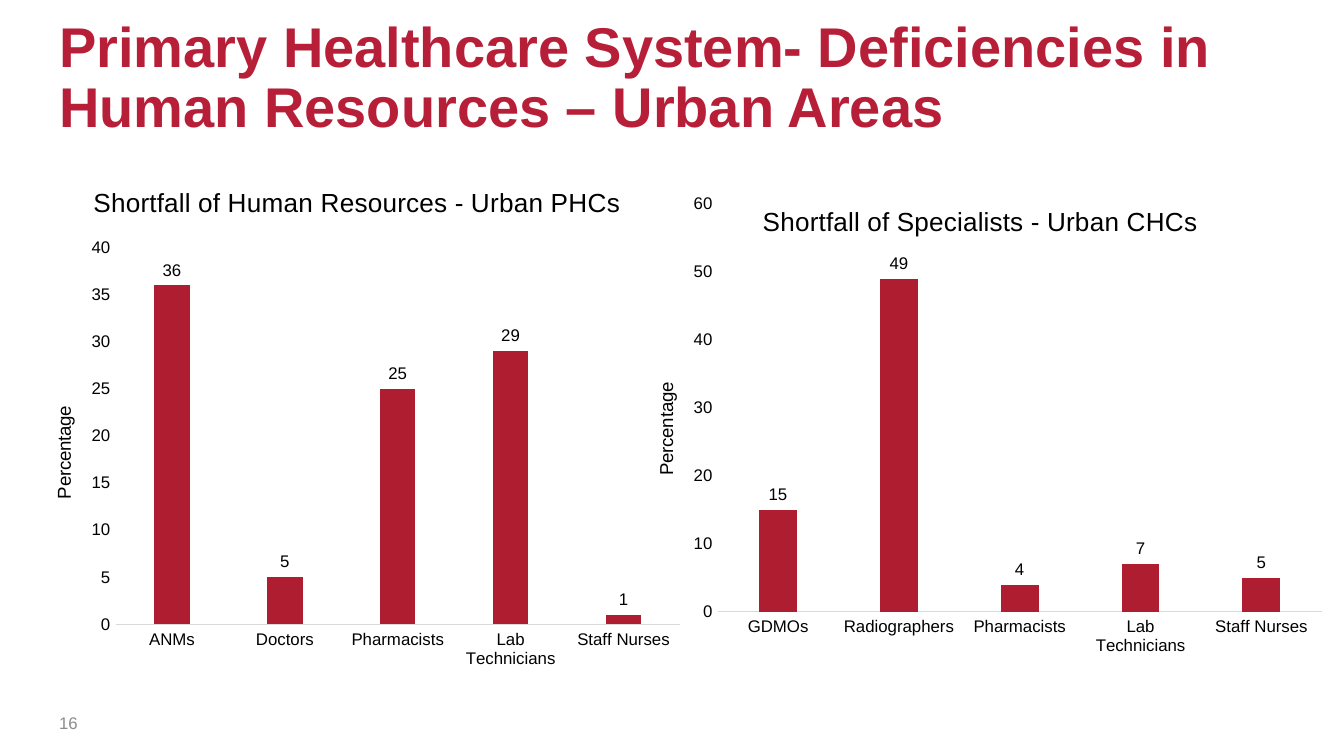
from dataclasses import dataclass

from lxml import etree
from pptx import Presentation
from pptx.chart.data import CategoryChartData
from pptx.dml.color import RGBColor
from pptx.enum.chart import XL_CHART_TYPE, XL_LABEL_POSITION, XL_TICK_MARK
from pptx.enum.text import MSO_ANCHOR
from pptx.oxml.ns import qn
from pptx.util import Inches, Pt

COLUMNS = XL_CHART_TYPE.COLUMN_CLUSTERED
OUTSIDE_END = XL_LABEL_POSITION.OUTSIDE_END
NO_TICK = XL_TICK_MARK.NONE
MIDDLE = MSO_ANCHOR.MIDDLE

FONT = "Arial"
BLACK = "000000"
HEADING_RED = "B71F38"
BAR_RED = "AF1D30"
AXIS_GREY = "D9D9D9"
NUMBER_GREY = "8C8C8C"


@dataclass(frozen=True)
class Shortfall:
    """One chart; the layout fields are fractions of the chart's size."""

    title: str
    box: tuple[float, float, float, float]
    percentages: dict[str, int]
    axis_max: int
    axis_step: int
    title_at: tuple[float, float]
    axis_title_at: tuple[float, float]
    plot_at: tuple[float, float, float, float]


SHORTFALLS = (
    Shortfall(
        "Shortfall of Human Resources - Urban PHCs",
        (0.16, 1.23, 5, 3.84),
        {"ANMs": 36, "Doctors": 5, "Pharmacists": 25,
         "Lab Technicians": 29, "Staff Nurses": 1},
        40, 5, (0.1, 0.03), (0.04, 0.46), (0.14, 0.16, 0.84, 0.73),
    ),
    Shortfall(
        "Shortfall of Specialists - Urban CHCs",
        (4.84, 1.34, 5, 3.61),
        {"GDMOs": 15, "Radiographers": 49, "Pharmacists": 4,
         "Lab Technicians": 7, "Staff Nurses": 5},
        60, 10, (0.16, 0.04), (0, 0.41), (0.1, 0.05, 0.9, 0.84),
    ),
)


def rgb(color: str) -> RGBColor:
    return RGBColor.from_string(color)


def style_font(font, size: float, color: str = BLACK, bold: bool = False) -> None:
    font.name = FONT
    font.size = Pt(size)
    font.bold = bold
    font.color.rgb = rgb(color)


def add_text(slide, box: tuple, text: str, size: float, color: str,
             bold: bool = False, line_spacing: float = 1.0) -> None:
    frame = slide.shapes.add_textbox(*map(Inches, box)).text_frame
    frame.word_wrap = True
    frame.vertical_anchor = MIDDLE
    frame.margin_left = frame.margin_right = 0
    frame.margin_top = frame.margin_bottom = Inches(0.06)
    paragraph = frame.paragraphs[0]
    paragraph.line_spacing = line_spacing
    run = paragraph.add_run()
    run.text = text
    style_font(run.font, size, color, bold)


def manual_layout(position: tuple, inner: bool = False):
    """Build a c:layout element from fractions x, y and optionally w, h."""
    layout = etree.Element(qn("c:layout"))
    manual = etree.SubElement(layout, qn("c:manualLayout"))
    if inner:
        etree.SubElement(manual, qn("c:layoutTarget")).set("val", "inner")
    for name in ("xMode", "yMode"):
        etree.SubElement(manual, qn(f"c:{name}")).set("val", "edge")
    for name, value in zip("xywh", position):
        etree.SubElement(manual, qn(f"c:{name}")).set("val", str(value))
    return layout


def drop_layout(element) -> None:
    for layout in element.findall(qn("c:layout")):
        element.remove(layout)


def write_title(title, text: str, size: float, position: tuple) -> None:
    run = title.text_frame.paragraphs[0].add_run()
    run.text = text
    style_font(run.font, size)
    element = title._element
    drop_layout(element)
    element.find(qn("c:tx")).addnext(manual_layout(position))


def style_axis(axis) -> None:
    axis.has_major_gridlines = False
    axis.major_tick_mark = axis.minor_tick_mark = NO_TICK
    style_font(axis.tick_labels.font, 9)


def add_shortfall(slide, shortfall: Shortfall) -> None:
    data = CategoryChartData()
    data.categories = list(shortfall.percentages)
    data.add_series("Series 1", list(shortfall.percentages.values()))
    chart = slide.shapes.add_chart(
        COLUMNS, *map(Inches, shortfall.box), data).chart
    chart.has_legend = False
    style_font(chart.font, 10)
    write_title(chart.chart_title, shortfall.title, 14, shortfall.title_at)

    plot_area = chart._chartSpace.chart.plotArea
    drop_layout(plot_area)
    plot_area.insert(0, manual_layout(shortfall.plot_at, inner=True))

    categories, values = chart.category_axis, chart.value_axis
    style_axis(categories)
    categories.format.line.color.rgb = rgb(AXIS_GREY)
    categories.format.line.width = Pt(0.75)
    style_axis(values)
    values.format.line.fill.background()
    values.minimum_scale = 0
    values.maximum_scale = shortfall.axis_max
    values.major_unit = shortfall.axis_step
    write_title(values.axis_title, "Percentage", 10, shortfall.axis_title_at)
    body = values.axis_title._element.find(".//" + qn("a:bodyPr"))
    body.set("rot", "-5400000")
    body.set("vert", "horz")

    plot = chart.plots[0]
    plot.vary_by_categories = False
    plot.gap_width = 219
    plot.overlap = -27
    bars = plot.series[0]
    bars.format.fill.solid()
    bars.format.fill.fore_color.rgb = rgb(BAR_RED)
    labels = bars.data_labels
    labels.show_value = True
    labels.number_format = "#,##0"
    labels.number_format_is_linked = False
    labels.position = OUTSIDE_END
    style_font(labels.font, 9)


def main() -> None:
    deck = Presentation()
    deck.slide_width = Inches(10)
    deck.slide_height = deck.slide_width * 9 // 16
    slide = deck.slides.add_slide(deck.slide_layouts[6])
    add_text(
        slide, (0.44, 0.1, 9.45, 0.98),
        "Primary Healthcare System- Deficiencies in Human Resources – Urban Areas",
        30, HEADING_RED, bold=True, line_spacing=0.9)
    add_text(slide, (0.44, 5.22, 0.43, 0.31), "16", 9, NUMBER_GREY)
    for shortfall in SHORTFALLS:
        add_shortfall(slide, shortfall)
    deck.save("out.pptx")


if __name__ == "__main__":
    main()
